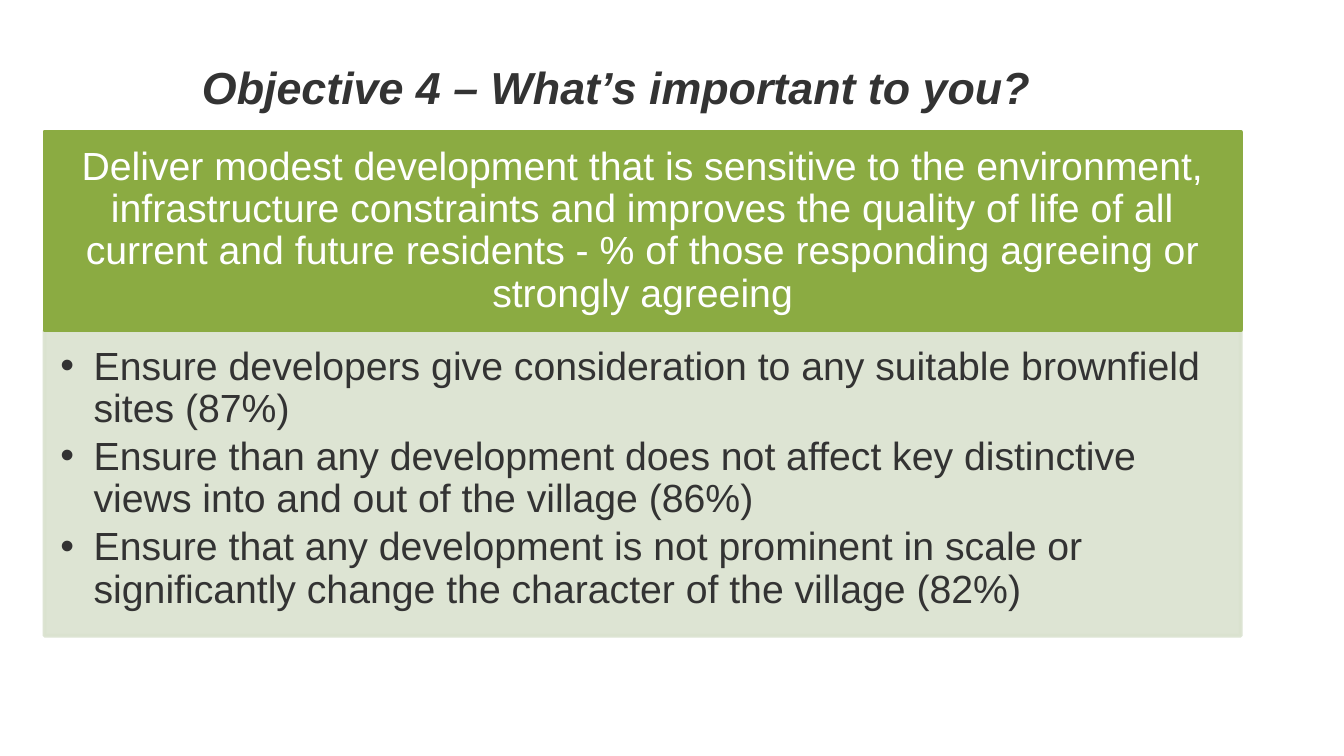
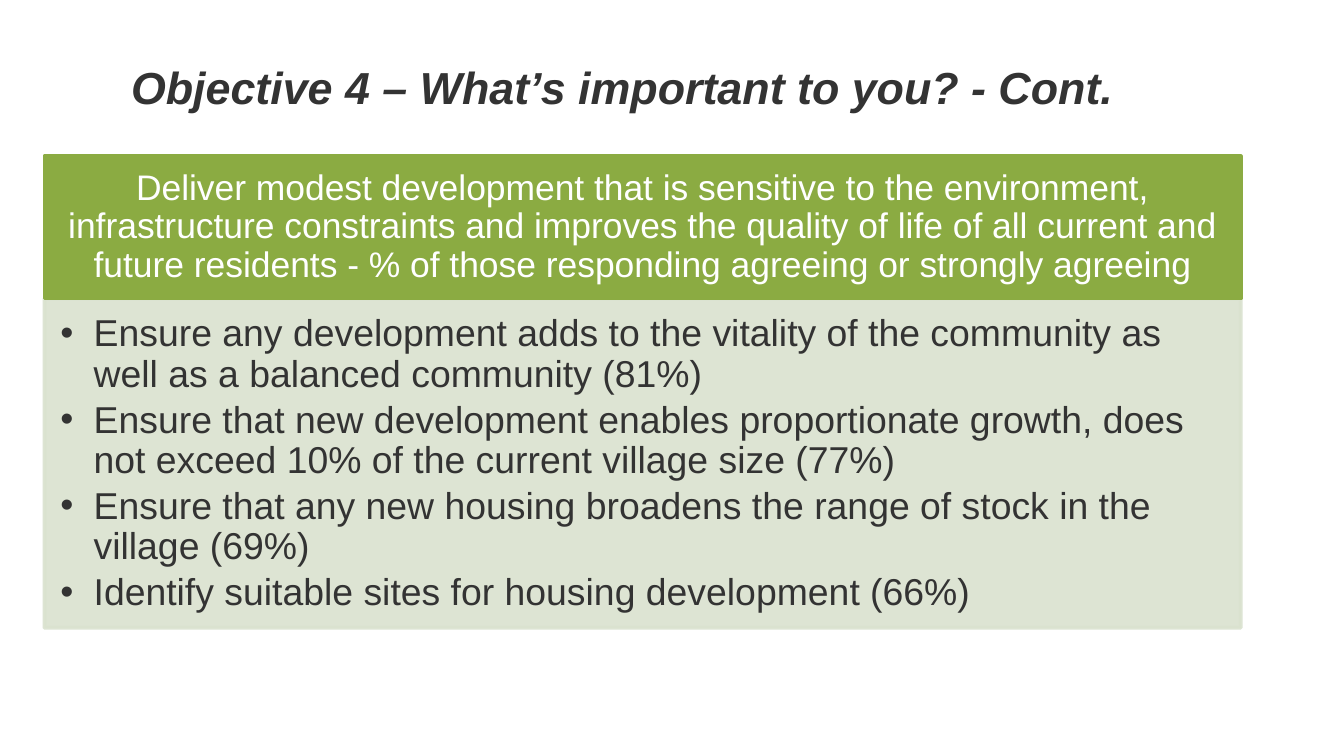
import dataclasses

import lxml.etree
import pptx
import pptx.dml.color
import pptx.enum.shapes
import pptx.enum.text
import pptx.oxml
import pptx.oxml.ns
import pptx.util

Cm = pptx.util.Cm
Pt = pptx.util.Pt
RGB = pptx.dml.color.RGBColor
Align = pptx.enum.text.PP_ALIGN
Anchor = pptx.enum.text.MSO_ANCHOR


@dataclasses.dataclass(frozen=True)
class Theme:
    font: str = "Arial"
    ink: RGB = RGB(0x33, 0x33, 0x33)
    on_green: RGB = RGB(0xFF, 0xFF, 0xFF)
    green: RGB = RGB(0x8B, 0xAB, 0x42)
    pale_green: RGB = RGB(0xDA, 0xE2, 0xCF)
    pale_opacity: int = 90
    border: int = 2
    title_size: int = 24
    line_spacing: float = 0.9
    panel_left: float = 0.84
    panel_width: float = 22.61


THEME = Theme()

AIM = (
    "Deliver modest development that is sensitive to the environment, "
    "infrastructure constraints and improves the quality of life of all "
    "current and future residents - % of those responding agreeing or "
    "strongly agreeing"
)


@dataclasses.dataclass(frozen=True)
class Objective:
    title: str
    top: float
    aim_height: float
    aim_size: int
    priorities_height: float
    priorities_size: int
    priorities: tuple


OBJECTIVES = (
    Objective(
        "Objective 4 – What’s important to you? ",
        2.49, 3.75, 21, 5.77, 21,
        (
            "Ensure developers give consideration to any suitable brownfield sites (87%)",
            "Ensure than any development does not affect key distinctive views into and out of the village (86%)",
            "Ensure that any development is not prominent in scale or significantly change the character of the village (82%)",
        ),
    ),
    Objective(
        "Objective 4 – What’s important to you? - Cont.",
        2.95, 2.69, 19, 6.22, 20,
        (
            "Ensure any development adds to the vitality of the community as well as a balanced community (81%)",
            "Ensure that new development enables proportionate growth, does not exceed 10% of the current village size (77%)",
            "Ensure that any new housing broadens the range of stock in the village (69%)",
            "Identify suitable sites for housing development (66%)",
        ),
    ),
)


def place(shape, left, top, width, height):
    shape.left, shape.top = Cm(left), Cm(top)
    shape.width, shape.height = Cm(width), Cm(height)


def paint(shape, color, opacity=100):
    shape.fill.solid()
    shape.fill.fore_color.rgb = color
    shape.line.color.rgb = color
    shape.line.width = Pt(THEME.border)
    if opacity < 100:
        for color_node in shape._element.spPr.iter(pptx.oxml.ns.qn("a:srgbClr")):
            alpha = lxml.etree.SubElement(color_node, pptx.oxml.ns.qn("a:alpha"))
            alpha.set("val", str(opacity * 1000))


def set_frame(frame, anchor, left, top, right, bottom):
    frame.word_wrap = True
    frame.auto_size = pptx.enum.text.MSO_AUTO_SIZE.NONE
    frame.vertical_anchor = anchor
    frame.margin_left, frame.margin_top = Cm(left), Cm(top)
    frame.margin_right, frame.margin_bottom = Cm(right), Cm(bottom)


def set_font(paragraph, size, color, emphasis=False):
    font = paragraph.font
    font.name, font.size = THEME.font, Pt(size)
    font.color.rgb = color
    font.bold = font.italic = emphasis


def add_bullet(paragraph, indent):
    properties = paragraph._p.get_or_add_pPr()
    properties.set("marL", str(Cm(indent)))
    properties.set("indent", str(-Cm(indent)))
    bullet = lxml.etree.SubElement(properties, pptx.oxml.ns.qn("a:buChar"))
    bullet.set("char", "•")


def write_title(slide, text):
    title = slide.shapes.title
    place(title, 0.33, 0.91, 22.86, 1.45)
    set_frame(title.text_frame, Anchor.MIDDLE, 0.25, 0.13, 0.25, 0.13)
    title.text_frame.text = text
    heading = title.text_frame.paragraphs[0]
    heading.alignment = Align.CENTER
    set_font(heading, THEME.title_size, THEME.ink, emphasis=True)


def add_aim(slide, objective):
    band = slide.shapes.add_shape(
        pptx.enum.shapes.MSO_SHAPE.RECTANGLE,
        Cm(THEME.panel_left), Cm(objective.top),
        Cm(THEME.panel_width), Cm(objective.aim_height),
    )
    band.shadow.inherit = False
    paint(band, THEME.green)
    set_frame(band.text_frame, Anchor.MIDDLE, 0.4, 0.22, 0.4, 0.22)
    band.text_frame.text = AIM
    statement = band.text_frame.paragraphs[0]
    statement.alignment = Align.CENTER
    statement.line_spacing = THEME.line_spacing
    set_font(statement, objective.aim_size, THEME.on_green)


def write_priorities(slide, objective):
    panel = slide.placeholders[1]
    place(panel, THEME.panel_left, objective.top + objective.aim_height,
          THEME.panel_width, objective.priorities_height)
    paint(panel, THEME.pale_green, THEME.pale_opacity)
    set_frame(panel.text_frame, Anchor.TOP, 0.3, 0.3, 0.4, 0.45)
    panel.text_frame.text = "\n".join(objective.priorities)
    for priority in panel.text_frame.paragraphs:
        priority.level = 1
        priority.alignment = Align.LEFT
        priority.line_spacing = THEME.line_spacing
        priority.space_before = Pt(0)
        priority.space_after = Pt(3)
        add_bullet(priority, 0.63)
        set_font(priority, objective.priorities_size, THEME.ink)


def main():
    deck = pptx.Presentation()
    deck.slide_width, deck.slide_height = Cm(25.4), Cm(14.28)
    for objective in OBJECTIVES:
        slide = deck.slides.add_slide(deck.slide_layouts[1])
        write_title(slide, objective.title)
        add_aim(slide, objective)
        write_priorities(slide, objective)
    deck.save("out.pptx")


if __name__ == "__main__":
    main()
